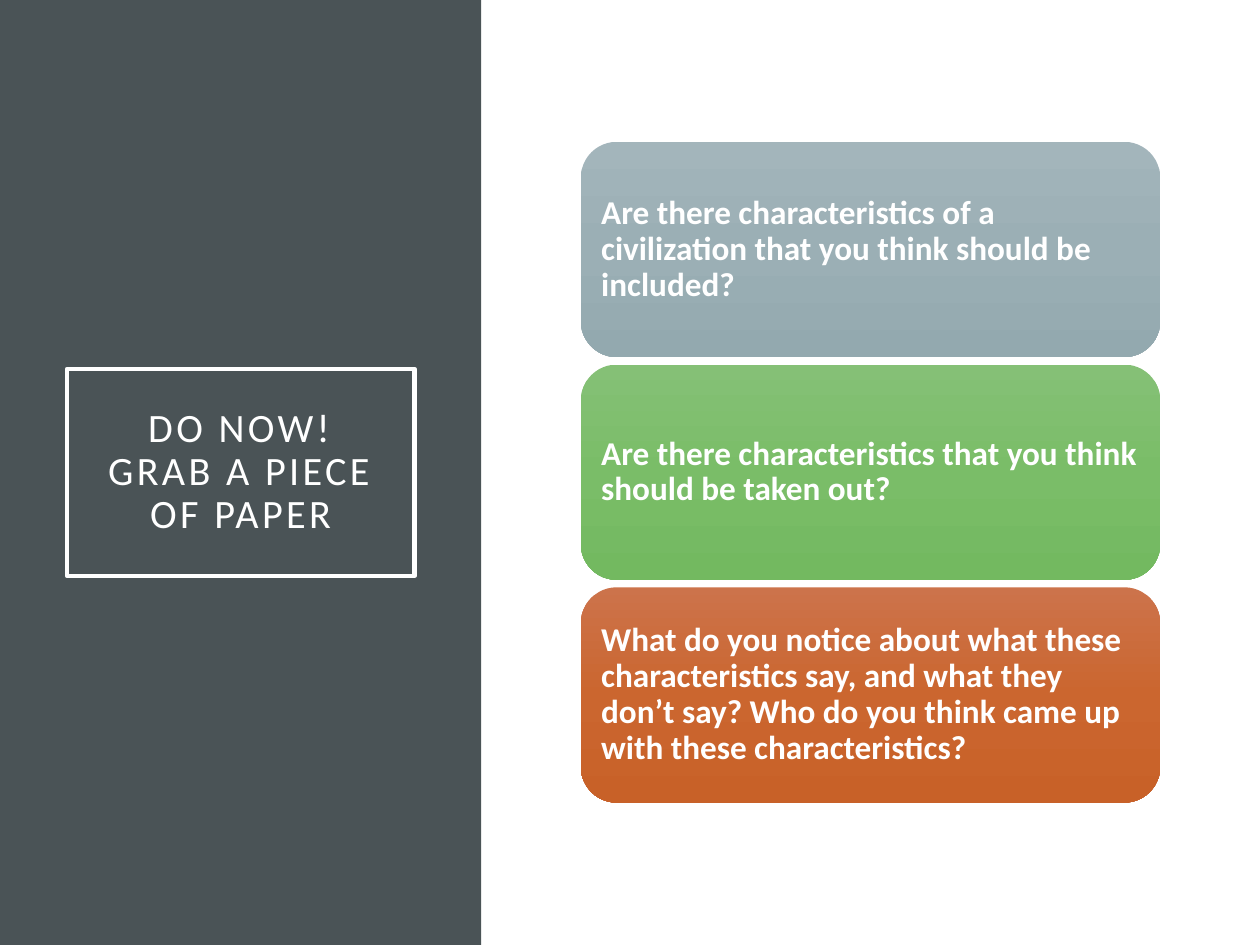
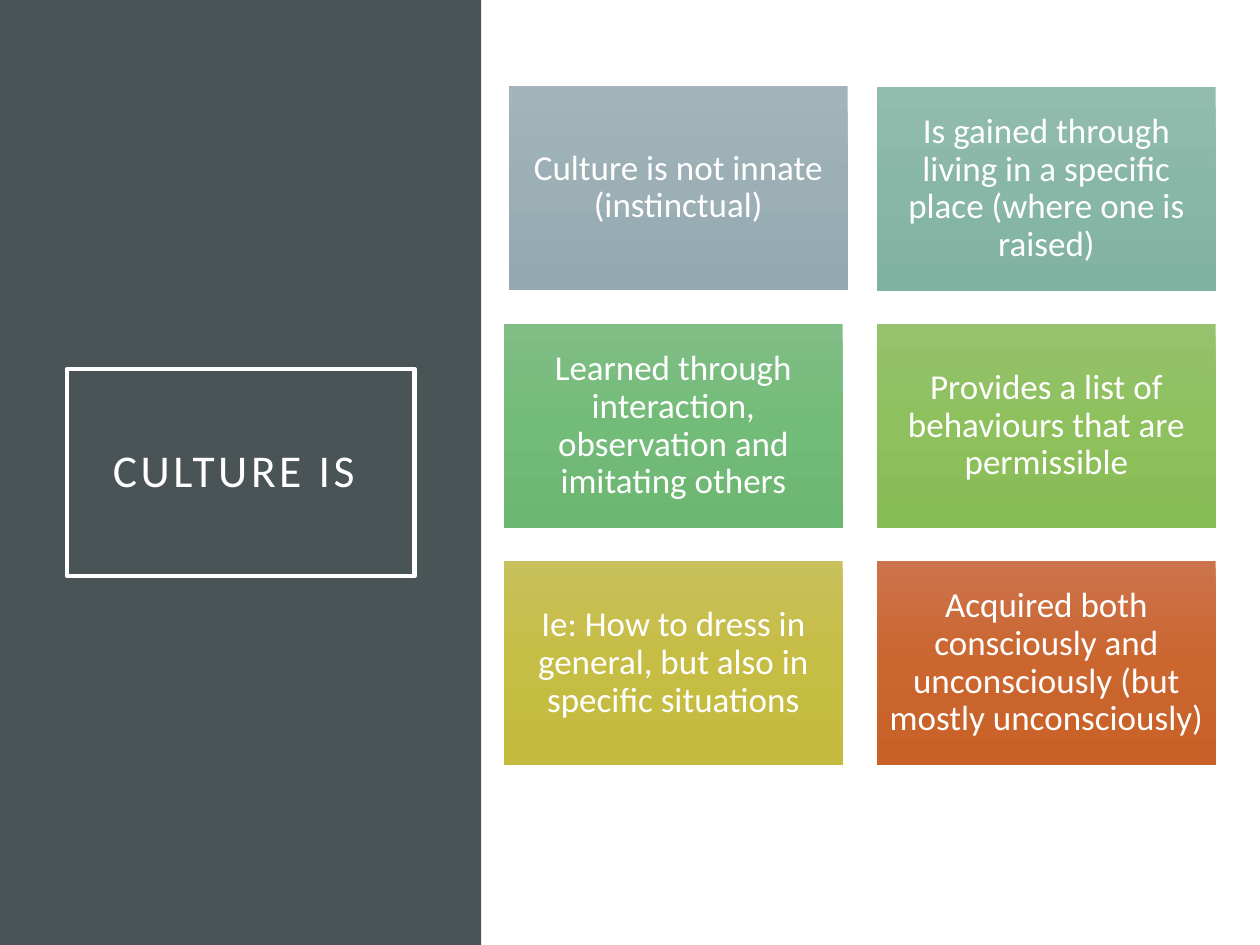
from copy import deepcopy

from pptx import Presentation
from pptx.dml.color import RGBColor
from pptx.enum.shapes import MSO_SHAPE
from pptx.enum.text import MSO_ANCHOR, PP_ALIGN
from pptx.oxml.ns import qn
from pptx.util import Cm, Pt

# Shared look
FONT = "Calibri"
WHITE = "FFFFFF"
PANEL = "4A5356"
GREY = ("A3B5BB", "9BAFB5", "93A9AF")
TEAL = ("92BCAD", "88B7A7", "80B2A1")
SEA_GREEN = ("80BE85", "73BB79", "6BB671")
GREEN = ("85C076", "7ABD68", "73B960")
LIME = ("96C26D", "8EC05D", "88BC55")
MUSTARD = ("C8C05A", "C6BD45", "C4BA3D")
ORANGE = ("CC734B", "CB662F", "C86128")

# Content; "nudge" shifts single cards off the grid
SLIDES = [
    {
        "title": "DO NOW!\vGRAB A PIECE OF PAPER", "title_size": 23, "spacing": 1.9,
        "shape": MSO_SHAPE.ROUNDED_RECTANGLE, "columns": 1,
        "origin": (11.71, 2.86), "card": (11.68, 4.34), "pitch": (0, 4.49),
        "size": 19, "bold": True, "align": PP_ALIGN.LEFT, "nudge": {},
        "cards": [
            ("Are there characteristics of a civilization that you think should be included?", GREY),
            ("Are there characteristics that you think should be taken out?", GREEN),
            ("What do you notice about what these characteristics say, and what they don’t say? "
             "Who do you think came up with these characteristics?", ORANGE),
        ],
    },
    {
        "title": "CULTURE IS ", "title_size": 26, "spacing": 2,
        "shape": MSO_SHAPE.RECTANGLE, "columns": 2,
        "origin": (10.16, 1.75), "card": (6.83, 4.11), "pitch": (7.52, 4.78),
        "size": 20, "bold": False, "align": PP_ALIGN.CENTER, "nudge": {0: (0.1, -0.02)},
        "cards": [
            ("Culture is not innate (instinctual)", GREY),
            ("Is gained through living in a specific place (where one is raised)", TEAL),
            ("Learned through interaction, observation and imitating others", SEA_GREEN),
            ("Provides a list of behaviours that are permissible", LIME),
            ("Ie: How to dress in general, but also in specific situations", MUSTARD),
            ("Acquired both consciously and unconsciously (but mostly unconsciously)", ORANGE),
        ],
    },
]


def color(hex_code):
    return RGBColor.from_string(hex_code)


def add_block(slide, kind, left, top, width, height):
    block = slide.shapes.add_shape(kind, Cm(left), Cm(top), Cm(width), Cm(height))
    block.shadow.inherit = False
    block.line.fill.background()
    return block


def write(block, text, size, align, inset, bold=False):
    frame = block.text_frame
    frame.word_wrap = True
    frame.vertical_anchor = MSO_ANCHOR.MIDDLE
    frame.margin_left = frame.margin_right = Cm(inset)
    frame.margin_top = frame.margin_bottom = Cm(inset)
    frame.text = text
    paragraph = frame.paragraphs[0]
    paragraph.alignment = align
    paragraph.line_spacing = 0.9
    paragraph.font.name = FONT
    paragraph.font.size = Pt(size)
    paragraph.font.bold = bold
    paragraph.font.color.rgb = color(WHITE)
    return paragraph


def shade(block, shades):
    """Fill from top to bottom through three shades."""
    block.fill.gradient()
    block.fill.gradient_angle = 270
    stop_list = block.fill._fill._gradFill.find(qn("a:gsLst"))
    stop_list.insert(1, deepcopy(stop_list[0]))
    for stop, position, shade_code in zip(block.fill.gradient_stops, (0, 0.5, 1), shades):
        stop.position = position
        stop.color.rgb = color(shade_code)


def add_title_panel(slide, title, size, spacing):
    panel = add_block(slide, MSO_SHAPE.RECTANGLE, 0, 0, 9.7, 19.05)
    panel.fill.solid()
    panel.fill.fore_color.rgb = color(PANEL)

    title_frame = add_block(slide, MSO_SHAPE.RECTANGLE, 1.35, 7.44, 7.01, 4.17)
    title_frame.fill.background()
    title_frame.line.color.rgb = color(WHITE)
    title_frame.line.width = Pt(2.5)
    paragraph = write(title_frame, title, size, PP_ALIGN.CENTER, 0.51)
    for run in paragraph.runs:
        run.font._element.set("spc", str(round(spacing * 100)))


def add_cards(slide, content):
    left, top = content["origin"]
    across, down = content["pitch"]
    for index, (text, shades) in enumerate(content["cards"]):
        row, column = divmod(index, content["columns"])
        shift_x, shift_y = content["nudge"].get(index, (0, 0))
        card = add_block(slide, content["shape"], left + column * across + shift_x,
                         top + row * down + shift_y, *content["card"])
        shade(card, shades)
        write(card, text, content["size"], content["align"], 0.2, content["bold"])


def main():
    deck = Presentation()
    deck.slide_width, deck.slide_height = Cm(25.4), Cm(19.05)
    for content in SLIDES:
        slide = deck.slides.add_slide(deck.slide_layouts[6])
        add_title_panel(slide, content["title"], content["title_size"], content["spacing"])
        add_cards(slide, content)
    deck.save("out.pptx")


if __name__ == "__main__":
    main()
